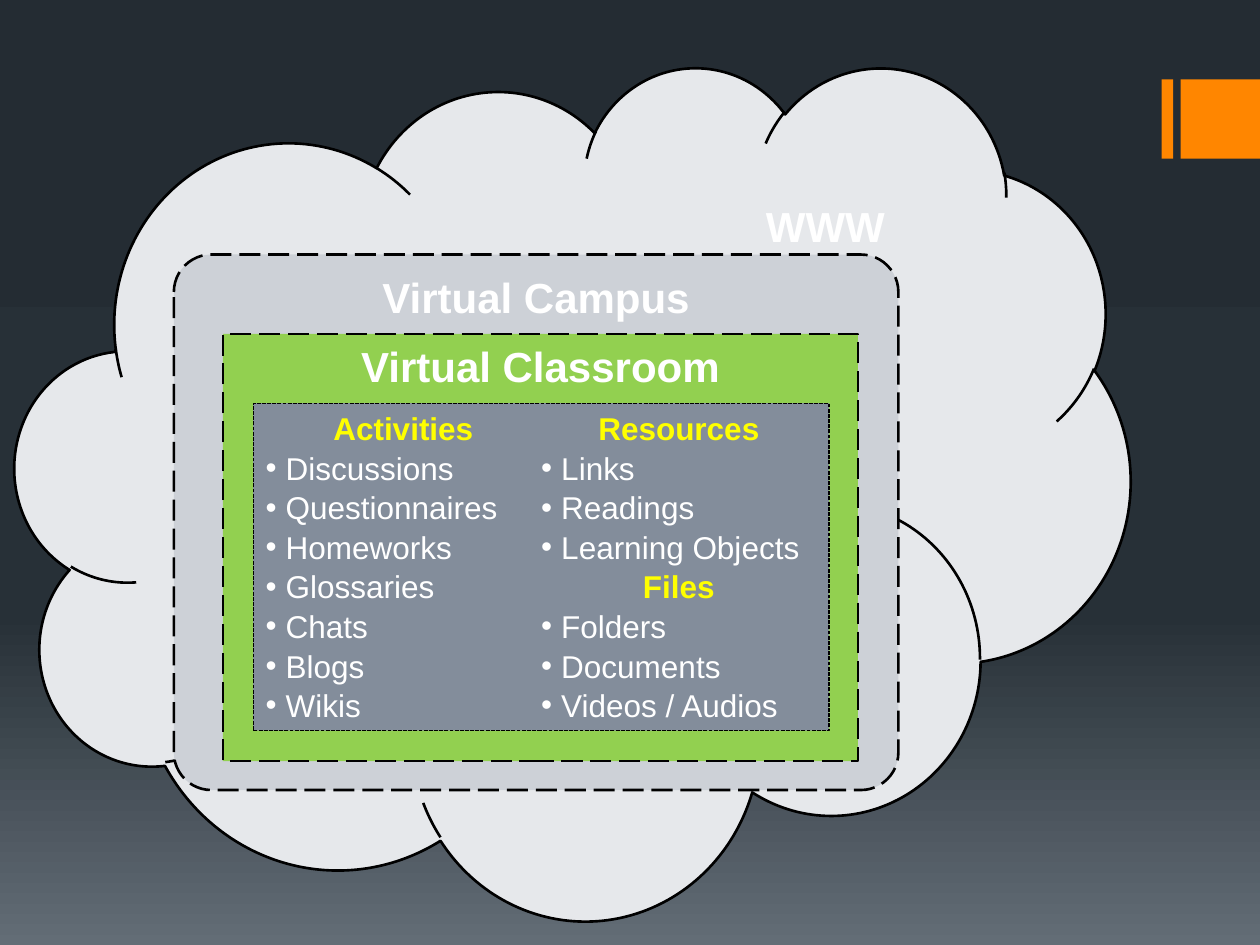
"""Build a slide of nested web, campus and classroom spaces."""
from copy import deepcopy
from pptx import Presentation
from pptx.dml.color import RGBColor as Rgb
from pptx.enum.dml import MSO_LINE as Dash
from pptx.enum.shapes import MSO_SHAPE as Kind
from pptx.enum.text import MSO_ANCHOR as Anchor, PP_ALIGN as Align
from pptx.oxml.ns import qn
from pptx.util import Inches, Pt
from lxml.etree import SubElement

THEME = {
    "font": "Arial", "head": 24, "list": 18,
    "text": "FFFFFF", "topic": "FFFF00", "line": "000000", "mark": "FF8600",
    "cloud": "E6E8EB", "campus": "CDD1D7", "room": "92D050", "panel": "838D9B",
    "back": [(0, "242C33"), (0.65, "273037"), (1, "636D76")],
}
MARKS = [(9.22, 0.63, 0.09, 0.63), (9.37, 0.63, 0.63, 0.63)]
SPACES = [
    ("WWW", Kind.CLOUD, (0.12, 0.52, 8.85, 6.77), "cloud", None, Align.RIGHT),
    ("Virtual Campus", Kind.ROUNDED_RECTANGLE, (1.38, 2.02, 5.75, 4.25),
     "campus", Dash.LONG_DASH, Align.CENTER),
    ("Virtual Classroom", Kind.RECTANGLE, (1.77, 2.65, 5.04, 3.39),
     "room", Dash.LONG_DASH, Align.CENTER),
]
PANEL = (2.01, 3.2, 4.57, 2.6)
TOPICS = [
    ("Activities", ["Discussions", "Questionnaires", "Homeworks", "Glossaries",
                    "Chats", "Blogs", "Wikis"]),
    ("Resources", ["Links", "Readings", "Learning Objects"]),
    ("Files", ["Folders", "Documents", "Videos / Audios"]),
]


def color(name):
    return Rgb.from_string(THEME[name])


def paint(slide):
    fill = slide.background.fill
    fill.gradient()
    fill.gradient_angle = 270
    stops = fill.gradient_stops
    base = fill._fill._gradFill.find(qn("a:gsLst"))
    base.append(deepcopy(base[0]))
    for stop, (pos, tone) in zip(fill.gradient_stops, THEME["back"]):
        stop.position = pos
        stop.color.rgb = Rgb.from_string(tone)


def add_box(slide, kind, area, tone, width=0, dash=None):
    box = slide.shapes.add_shape(kind, *map(Inches, area))
    box.shadow.inherit = False
    box.fill.solid()
    box.fill.fore_color.rgb = color(tone)
    if width:
        box.line.color.rgb = color("line")
        box.line.width = Pt(width)
        if dash:
            box.line.dash_style = dash
    else:
        box.line.fill.background()
    box.text_frame.word_wrap = True
    box.text_frame.vertical_anchor = Anchor.TOP
    return box


def add_text(para, text, size, tone="text", bold=True, align=Align.CENTER):
    para.alignment = align
    run = para.add_run()
    run.text = text
    font = run.font
    font.name, font.size, font.bold = THEME["font"], Pt(THEME[size]), bold
    font.color.rgb = color(tone)


def add_dot(para):
    props = para._p.get_or_add_pPr()
    props.set("marL", str(Inches(0.16)))
    props.set("indent", str(-Inches(0.16)))
    SubElement(props, qn("a:buFont"), typeface=THEME["font"])
    SubElement(props, qn("a:buChar"), char="•")


def add_topics(slide):
    frame = add_box(slide, Kind.RECTANGLE, PANEL, "panel", 0.75,
                    Dash.SQUARE_DOT).text_frame
    frame._txBody.bodyPr.set("numCol", "2")
    rows = [(text, text == topic) for topic, items in TOPICS
            for text in [topic, *items]]
    for i, (text, head) in enumerate(rows):
        para = frame.add_paragraph() if i else frame.paragraphs[0]
        para.space_after = Pt(1)
        if head:
            add_text(para, text, "list", "topic")
        else:
            add_text(para, text, "list", bold=False, align=Align.LEFT)
            add_dot(para)


def main():
    deck = Presentation()
    deck.slide_width, deck.slide_height = Inches(10), Inches(7.5)
    slide = deck.slides.add_slide(deck.slide_layouts[6])
    paint(slide)
    for area in MARKS:
        add_box(slide, Kind.RECTANGLE, area, "mark")
    for text, kind, area, tone, dash, align in SPACES:
        box = add_box(slide, kind, area, tone, 1.5, dash)
        if kind == Kind.ROUNDED_RECTANGLE:
            box.adjustments[0] = 0.07
        add_text(box.text_frame.paragraphs[0], text, "head", align=align)
    add_topics(slide)
    deck.save("out.pptx")


if __name__ == "__main__":
    main()
